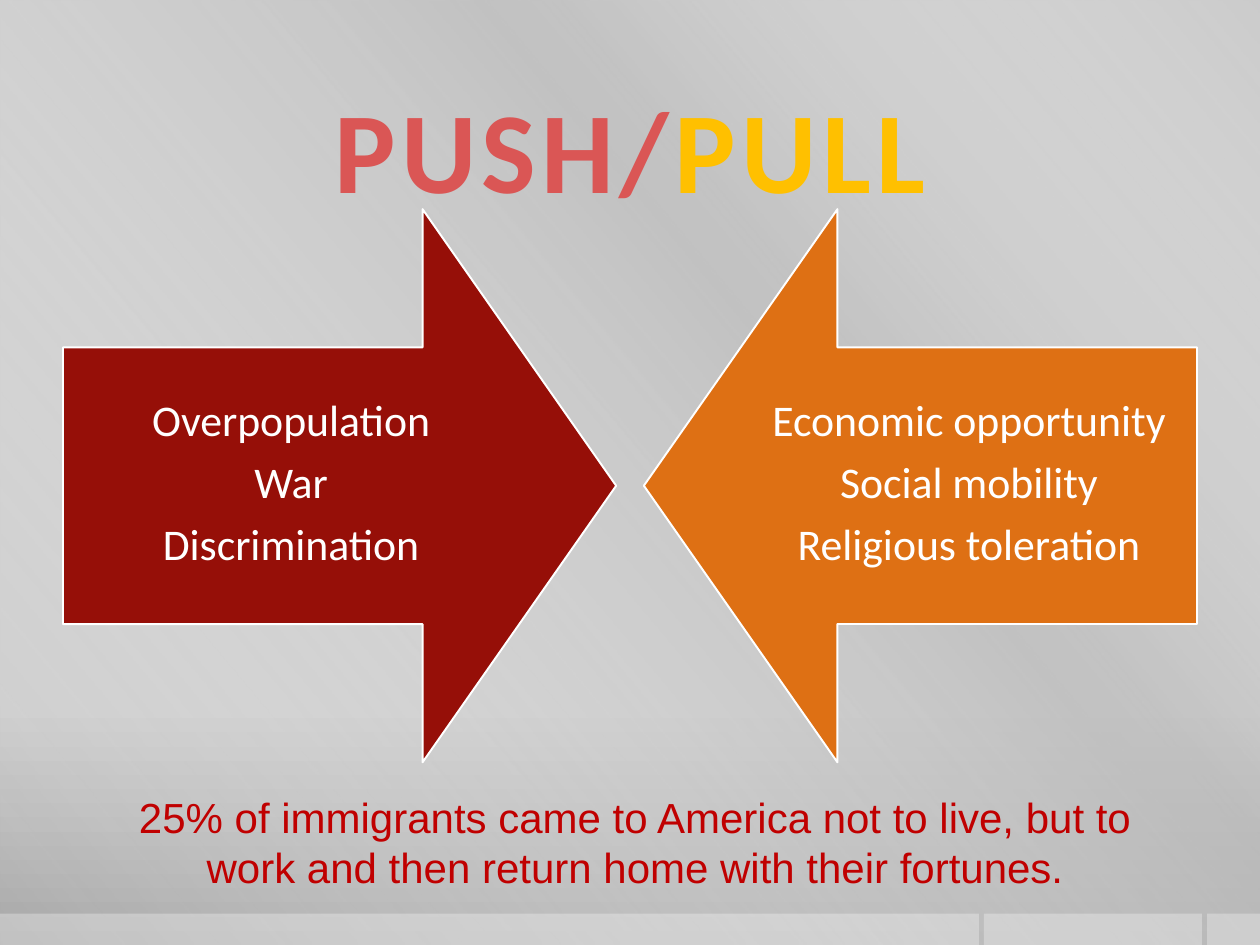
from lxml import etree
from pptx import Presentation
from pptx import util as u
from pptx.dml.color import RGBColor
from pptx.enum import shapes, text
from pptx.oxml.ns import qn

COLORS = {"white": "FFFFFF", "push": "960F08", "pull": "DE7014",
          "gold": "FFC000", "note": "C00000", "outline": "F8F4F4",
          "shadow": "810600", "band": "BFBFBF"}


def set_gradient(parent, stops, angle):
    """Replace the stops of the gradient in parent: (percent, hex, opacity)."""
    gradient = parent.find(qn("a:gradFill"))
    for child in list(gradient):
        gradient.remove(child)
    stop_list = etree.SubElement(gradient, qn("a:gsLst"))
    for percent, color, opacity in stops:
        stop = etree.SubElement(stop_list, qn("a:gs"), pos=str(percent * 1000))
        value = etree.SubElement(stop, qn("a:srgbClr"), val=color)
        etree.SubElement(value, qn("a:alpha"), val=str(opacity * 1000))
    etree.SubElement(gradient, qn("a:lin"), ang=str(angle * 60000), scaled="0")


def add_text(para, words, size, color, font="Calibri", bold=False):
    para.alignment = text.PP_ALIGN.CENTER
    span = para.add_run()
    span.text = words
    span.font.size = u.Pt(size)
    span.font.name = font
    span.font.bold = bold
    span.font.color.rgb = RGBColor.from_string(COLORS[color])
    return span


deck = Presentation()
deck.slide_width, deck.slide_height = u.Inches(10), u.Inches(7.5)
page = deck.slides.add_slide(deck.slide_layouts[5])

# Background
page.background.fill.gradient()
set_gradient(page.element.find(".//" + qn("p:bgPr")),
             [(0, "CBCBCB", 100), (76, "C8C8C8", 100), (100, "A7A7A7", 100)], 90)

# Diagonal sheen and translucent footer strips
for left, top, width, height in [(0, 0, 10, 7.5), (9.58, 7.25, 0.42, 0.25),
                                 (7.81, 7.25, 1.73, 0.25), (0, 7.25, 7.77, 0.25)]:
    panel = page.shapes.add_shape(shapes.MSO_SHAPE.RECTANGLE, u.Inches(left), u.Inches(top),
                                  u.Inches(width), u.Inches(height))
    panel.shadow.inherit = False
    panel.line.fill.background()
    panel.fill.gradient()
    if top == 0:
        stops = [(0, COLORS["white"], 0), (34, COLORS["band"], 61),
                 (38, COLORS["band"], 76), (100, COLORS["white"], 0)]
        set_gradient(panel.element.spPr, stops, 140)
    else:
        panel.fill.solid()
        panel.fill.fore_color.rgb = RGBColor.from_string(COLORS["white"])
        value = panel.element.spPr.find(".//" + qn("a:srgbClr"))
        etree.SubElement(value, qn("a:alpha"), val="30000")

# Title, moved in front of the background panels
title = page.shapes.title
page.shapes.element.append(title.element)
title.left, title.top, title.width, title.height = map(u.Inches, (0.5, 0.67, 9, 1))
frame = title.text_frame
frame.word_wrap = True
frame.auto_size = text.MSO_AUTO_SIZE.NONE
frame.vertical_anchor = text.MSO_ANCHOR.MIDDLE
frame.margin_left = frame.margin_right = 0
frame.margin_top = frame.margin_bottom = u.Inches(0.05)
for words in ("PUSH/", "PULL"):
    span = add_text(frame.paragraphs[0], words, 66, "gold", bold=True)
    props = span.font._element
    props.set("spc", "300")
    if words == "PUSH/":
        span.font.fill.gradient()
        set_gradient(props, [(10, "DA5655", 100), (75, "810600", 100)], 90)
    outline = etree.Element(qn("a:ln"), w=str(u.Pt(0.9)))
    line_fill = etree.SubElement(outline, qn("a:solidFill"))
    etree.SubElement(line_fill, qn("a:srgbClr"), val=COLORS["outline"])
    props.insert(0, outline)
    effects = etree.Element(qn("a:effectLst"))
    shadow = etree.SubElement(effects, qn("a:outerShdw"), blurRad="25400",
                              dist="25400", dir="2700000")
    value = etree.SubElement(shadow, qn("a:srgbClr"), val=COLORS["shadow"])
    etree.SubElement(value, qn("a:alpha"), val="50000")
    props.insert(2, effects)

# Facing arrows with their reasons
sides = [
    (0.5, 270, "push", 0.5, ["Overpopulation", "War", "Discrimination"]),
    (5.11, 90, "pull", 5.88, ["Economic opportunity", "Social mobility", "Religious toleration"]),
]
for arrow_left, rotation, color, text_left, reasons in sides:
    arrow = page.shapes.add_shape(shapes.MSO_SHAPE.DOWN_ARROW, u.Inches(arrow_left),
                                  u.Inches(1.66), u.Inches(4.39), u.Inches(4.39))
    arrow.rotation = rotation
    arrow.adjustments[0], arrow.adjustments[1] = 0.5, 0.35
    arrow.shadow.inherit = False
    arrow.fill.solid()
    arrow.fill.fore_color.rgb = RGBColor.from_string(COLORS[color])
    arrow.line.color.rgb = RGBColor.from_string(COLORS["white"])
    arrow.line.width = u.Pt(1.1)

    box = page.shapes.add_textbox(u.Inches(text_left), u.Inches(2.75),
                                  u.Inches(3.62), u.Inches(2.19))
    frame = box.text_frame
    frame.word_wrap = True
    frame.vertical_anchor = text.MSO_ANCHOR.MIDDLE
    frame.margin_left = frame.margin_right = u.Inches(0.19)
    frame.margin_top = frame.margin_bottom = u.Inches(0.19)
    for index, reason in enumerate(reasons):
        para = frame.add_paragraph() if index else frame.paragraphs[0]
        para.line_spacing = 0.9
        para.space_after = u.Pt(8.5)
        add_text(para, reason, 25, "white")

# Closing note
box = page.shapes.add_textbox(u.Inches(0.75), u.Inches(6.23), u.Inches(8.58), u.Inches(0.91))
box.text_frame.word_wrap = True
box.text_frame.auto_size = text.MSO_AUTO_SIZE.SHAPE_TO_FIT_TEXT
add_text(box.text_frame.paragraphs[0],
         "25% of immigrants came to America not to live, but to work and then "
         "return home with their fortunes.", 24, "note", font="Arial")

deck.save("out.pptx")
